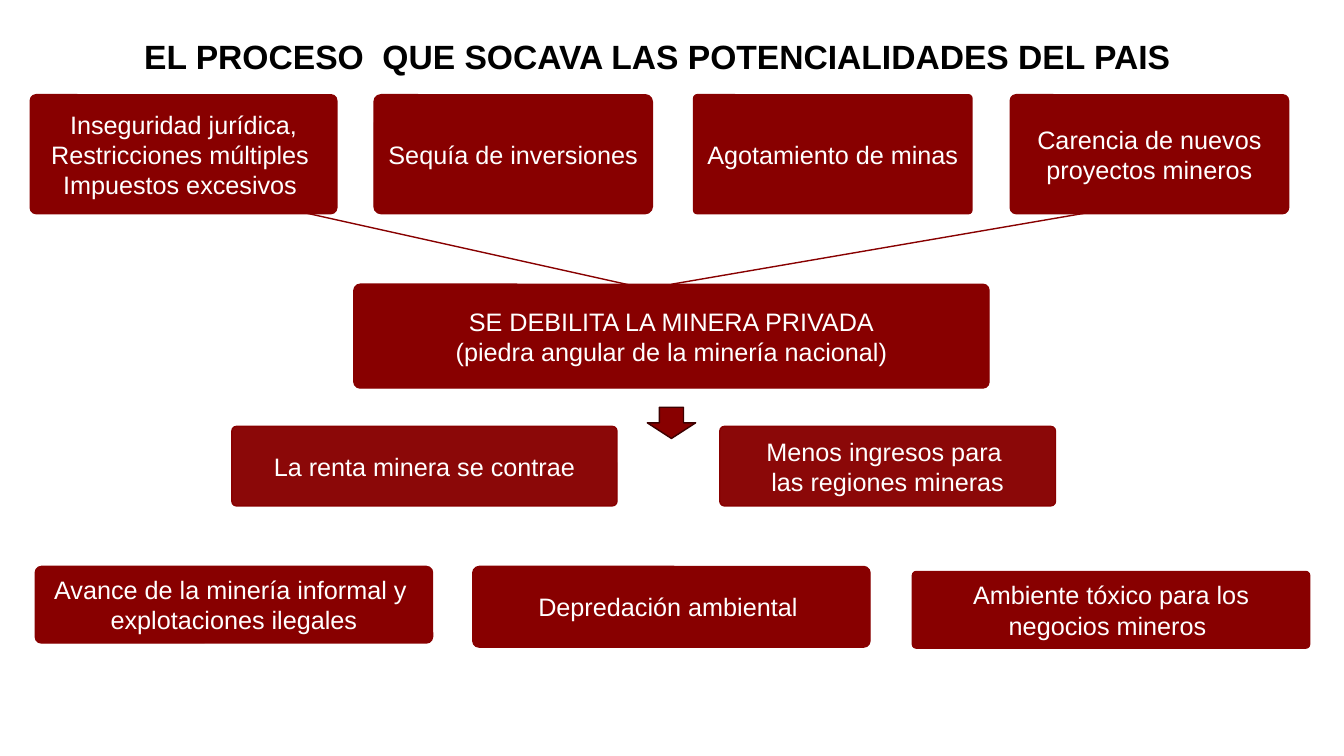
from dataclasses import dataclass

from lxml.etree import SubElement
from pptx import Presentation
from pptx.dml.color import RGBColor
from pptx.enum.shapes import MSO_CONNECTOR, MSO_SHAPE
from pptx.enum.text import MSO_ANCHOR, MSO_AUTO_SIZE, PP_ALIGN
from pptx.oxml.ns import qn
from pptx.slide import Slide
from pptx.text.text import TextFrame
from pptx.util import Inches, Pt


@dataclass(frozen=True)
class Theme:
    font: str = "Arial"
    title_size: int = 24
    box_size: int = 18
    line_width: int = 1
    red: RGBColor = RGBColor(0x88, 0x00, 0x00)
    dark_red: RGBColor = RGBColor(0x3C, 0x00, 0x00)
    white: RGBColor = RGBColor(0xFF, 0xFF, 0xFF)
    black: RGBColor = RGBColor(0x00, 0x00, 0x00)


@dataclass(frozen=True)
class Area:
    left: float
    top: float
    width: float
    height: float


@dataclass(frozen=True)
class Box:
    area: Area
    corner: float
    lines: tuple[str, ...]
    opacity: int = 100


@dataclass(frozen=True)
class Link:
    start: tuple[float, float]
    end: tuple[float, float]


THEME = Theme()
SLIDE_WIDTH = Inches(13.33)
SLIDE_HEIGHT = Inches(7.5)
TITLE = "EL PROCESO  QUE SOCAVA LAS POTENCIALIDADES DEL PAIS"
TITLE_AREA = Area(9.23, 4.13, 79.37, 6.67)
ARROW_AREA = Area(48.16, 53.87, 3.6, 4.13)

CAUSE_TOP, CAUSE_WIDTH, CAUSE_HEIGHT = 12.53, 20.71, 15.73
EFFECT_TOP, EFFECT_HEIGHT = 56.4, 10.53
OUTCOME_TOP, OUTCOME_WIDTH, OUTCOME_HEIGHT = 74.93, 29.56, 10.13

BOXES = (
    Box(Area(2.25, CAUSE_TOP, 22.81, CAUSE_HEIGHT), 0.05,
        ("Inseguridad jurídica, Restricciones múltiples ", "Impuestos excesivos ")),
    Box(Area(27.83, CAUSE_TOP, CAUSE_WIDTH, CAUSE_HEIGHT), 0.06,
        ("Sequía de inversiones",)),
    Box(Area(51.61, CAUSE_TOP, CAUSE_WIDTH, CAUSE_HEIGHT), 0.03,
        ("Agotamiento de minas",)),
    Box(Area(75.17, CAUSE_TOP, CAUSE_WIDTH, CAUSE_HEIGHT), 0.05,
        ("Carencia de nuevos proyectos mineros",)),
    Box(Area(26.33, 37.6, 47.26, 13.73), 0.06,
        ("SE DEBILITA LA MINERA PRIVADA", "(piedra angular de la minería nacional)")),
    Box(Area(17.25, EFFECT_TOP, 28.66, EFFECT_HEIGHT), 0.06,
        ("La renta minera se contrae",), 97),
    Box(Area(53.56, EFFECT_TOP, 24.98, EFFECT_HEIGHT), 0.06,
        ("Menos ingresos para ", "las regiones mineras"), 97),
    Box(Area(2.63, OUTCOME_TOP, OUTCOME_WIDTH, OUTCOME_HEIGHT), 0.08,
        ("Avance de la minería informal y ", "explotaciones ilegales")),
    Box(Area(35.18, OUTCOME_TOP, OUTCOME_WIDTH, 10.67), 0.08,
        ("Depredación ambiental ",)),
    Box(Area(67.89, 75.6, OUTCOME_WIDTH, OUTCOME_HEIGHT), 0.05,
        ("Ambiente tóxico para los negocios mineros ",)),
)

LINKS = (
    Link((17.25, 26), (47.94, 38.13)),
    Link((49.96, 37.6), (86.2, 26.53)),
)


def across(share: float) -> int:
    return round(SLIDE_WIDTH * share / 100)


def down(share: float) -> int:
    return round(SLIDE_HEIGHT * share / 100)


def place(area: Area) -> tuple[int, int, int, int]:
    return across(area.left), down(area.top), across(area.width), down(area.height)


def write(frame: TextFrame, lines: tuple[str, ...], size: int,
          color: RGBColor, bold: bool = False) -> None:
    frame.word_wrap = True
    for index, line in enumerate(lines):
        para = frame.add_paragraph() if index else frame.paragraphs[0]
        para.alignment = PP_ALIGN.CENTER
        span = para.add_run()
        span.text = line
        span.font.name = THEME.font
        span.font.size = Pt(size)
        span.font.bold = bold
        span.font.color.rgb = color


def add_title(page: Slide) -> None:
    title = page.shapes.title
    title.left, title.top, title.width, title.height = place(TITLE_AREA)
    frame = title.text_frame
    frame.auto_size = MSO_AUTO_SIZE.NONE
    frame.vertical_anchor = MSO_ANCHOR.TOP
    write(frame, (TITLE,), THEME.title_size, THEME.black, bold=True)


def add_filled(page: Slide, kind: MSO_SHAPE, area: Area, outline: RGBColor):
    shape = page.shapes.add_shape(kind, *place(area))
    shape.shadow.inherit = False
    shape.fill.solid()
    shape.fill.fore_color.rgb = THEME.red
    shape.line.color.rgb = outline
    shape.line.width = Pt(THEME.line_width)
    return shape


def add_box(page: Slide, box: Box) -> None:
    shape = add_filled(page, MSO_SHAPE.ROUNDED_RECTANGLE, box.area, THEME.red)
    shape.adjustments[0] = box.corner
    if box.opacity < 100:
        color = shape.fill._xPr.find(qn("a:solidFill"))[0]
        SubElement(color, qn("a:alpha"), val=str(box.opacity * 1000))
    shape.text_frame.vertical_anchor = MSO_ANCHOR.MIDDLE
    write(shape.text_frame, box.lines, THEME.box_size, THEME.white)


def add_link(page: Slide, link: Link) -> None:
    line = page.shapes.add_connector(
        MSO_CONNECTOR.STRAIGHT,
        across(link.start[0]), down(link.start[1]),
        across(link.end[0]), down(link.end[1]))
    line.line.color.rgb = THEME.red
    line.line.width = Pt(THEME.line_width)
    SubElement(line._element.spPr, qn("a:effectLst"))


def main() -> None:
    deck = Presentation()
    deck.slide_width = SLIDE_WIDTH
    deck.slide_height = SLIDE_HEIGHT
    page = deck.slides.add_slide(deck.slide_layouts.get_by_name("Title Only"))
    add_title(page)
    for link in LINKS:
        add_link(page, link)
    for box in BOXES:
        add_box(page, box)
    add_filled(page, MSO_SHAPE.DOWN_ARROW, ARROW_AREA, THEME.dark_red)
    deck.save("out.pptx")


if __name__ == "__main__":
    main()
